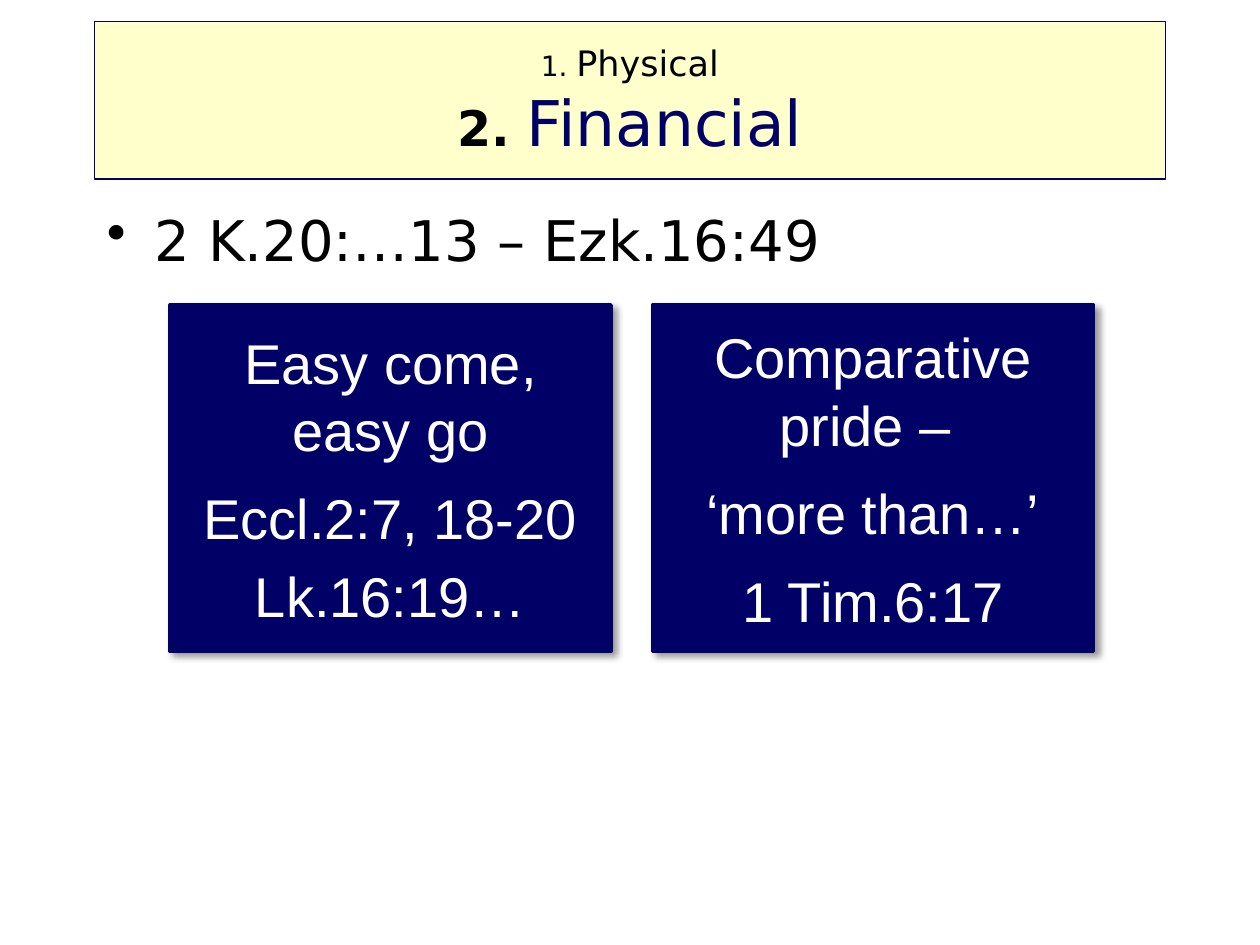
import pptx
import pptx.dml.color
import pptx.enum.shapes
import pptx.enum.text
import pptx.oxml
import pptx.oxml.ns
import pptx.util
from lxml import etree

Inches, Pt = pptx.util.Inches, pptx.util.Pt
RGBColor = pptx.dml.color.RGBColor
RECTANGLE = pptx.enum.shapes.MSO_SHAPE.RECTANGLE
CENTER = pptx.enum.text.PP_ALIGN.CENTER
MIDDLE = pptx.enum.text.MSO_ANCHOR.MIDDLE
qn = pptx.oxml.ns.qn

NAVY = RGBColor(0x00, 0x00, 0x66)
CREAM = RGBColor(0xFF, 0xFF, 0xCC)
BLACK = RGBColor(0x00, 0x00, 0x00)
WHITE = RGBColor(0xFF, 0xFF, 0xFF)

MARGIN, CONTENT_WIDTH = 0.75, 8.5
CARD_LEFT, CARD_TOP, CARD_WIDTH, CARD_HEIGHT = 1.35, 2.42, 3.5, 2.75
CARD_STEP = CARD_WIDTH + 0.33

SHADOW = (
    '<a:outerShdw xmlns:a="http://schemas.openxmlformats.org/drawingml/2006/main"'
    ' blurRad="50800" dist="38100" dir="2700000" algn="tl" rotWithShape="0">'
    '<a:srgbClr val="000000"><a:alpha val="40000"/></a:srgbClr></a:outerShdw>'
)


def add_panel(left, top, width, height, fill, line_width):
    panel = slide.shapes.add_shape(
        RECTANGLE, Inches(left), Inches(top), Inches(width), Inches(height))
    panel.shadow.inherit = False
    panel.fill.solid()
    panel.fill.fore_color.rgb = fill
    panel.line.color.rgb = NAVY
    panel.line.width = Pt(line_width)
    panel.text_frame.word_wrap = True
    panel.text_frame.vertical_anchor = MIDDLE
    return panel


def style_font(font, name, size, color):
    font.name = name
    font.size = Pt(size)
    font.color.rgb = color


prs = pptx.Presentation()
prs.slide_width, prs.slide_height = Inches(10), Inches(7.5)
slide = prs.slides.add_slide(prs.slide_layouts[6])

# Title banner: previous point small, current point large
banner = add_panel(MARGIN, 0.17, CONTENT_WIDTH, 1.25, CREAM, 0.75)
heading = banner.text_frame.paragraphs[0]
heading.alignment = CENTER
heading_lines = [
    [("1. ", 16, False, BLACK), ("Physical", 20, False, BLACK)],
    [("2. ", 28, True, BLACK), ("Financial", 36, False, NAVY)],
]
for number, pieces in enumerate(heading_lines):
    if number:
        heading.add_line_break()
    for text, size, bold, color in pieces:
        piece = heading.add_run()
        piece.text = text
        style_font(piece.font, "DejaVu Sans", size, color)
        piece.font.bold = bold

# Bulleted scripture references
references = slide.shapes.add_textbox(
    Inches(MARGIN), Inches(1.58), Inches(CONTENT_WIDTH), Inches(5))
references.text_frame.word_wrap = True
reference = references.text_frame.paragraphs[0]
reference.text = "2 K.20:…13 – Ezk.16:49"
reference.space_after = Pt(6)
bullet_format = reference._p.get_or_add_pPr()
bullet_format.set("marL", str(Inches(0.38)))
bullet_format.set("indent", str(-Inches(0.38)))
etree.SubElement(bullet_format, qn("a:buChar")).set("char", "•")
style_font(reference.font, "DejaVu Sans", 32, BLACK)

# Two cards: each line with the space after it
cards = [
    [("Easy come, easy go", 12), ("Eccl.2:7, 18-20", 6), ("Lk.16:19…", 6)],
    [("Comparative pride – ", 12), ("‘more than…’", 12), ("1 Tim.6:17", 6)],
]
for column, card_lines in enumerate(cards):
    card = add_panel(CARD_LEFT + column * CARD_STEP, CARD_TOP,
                     CARD_WIDTH, CARD_HEIGHT, NAVY, 2)
    effects = card._element.spPr.find(qn("a:effectLst"))
    effects.append(pptx.oxml.parse_xml(SHADOW))
    frame = card.text_frame
    for row, (text, gap) in enumerate(card_lines):
        line = frame.add_paragraph() if row else frame.paragraphs[0]
        line.text = text
        line.alignment = CENTER
        line.space_after = Pt(gap)
        style_font(line.font, "Arial", 32, WHITE)

prs.save("out.pptx")
